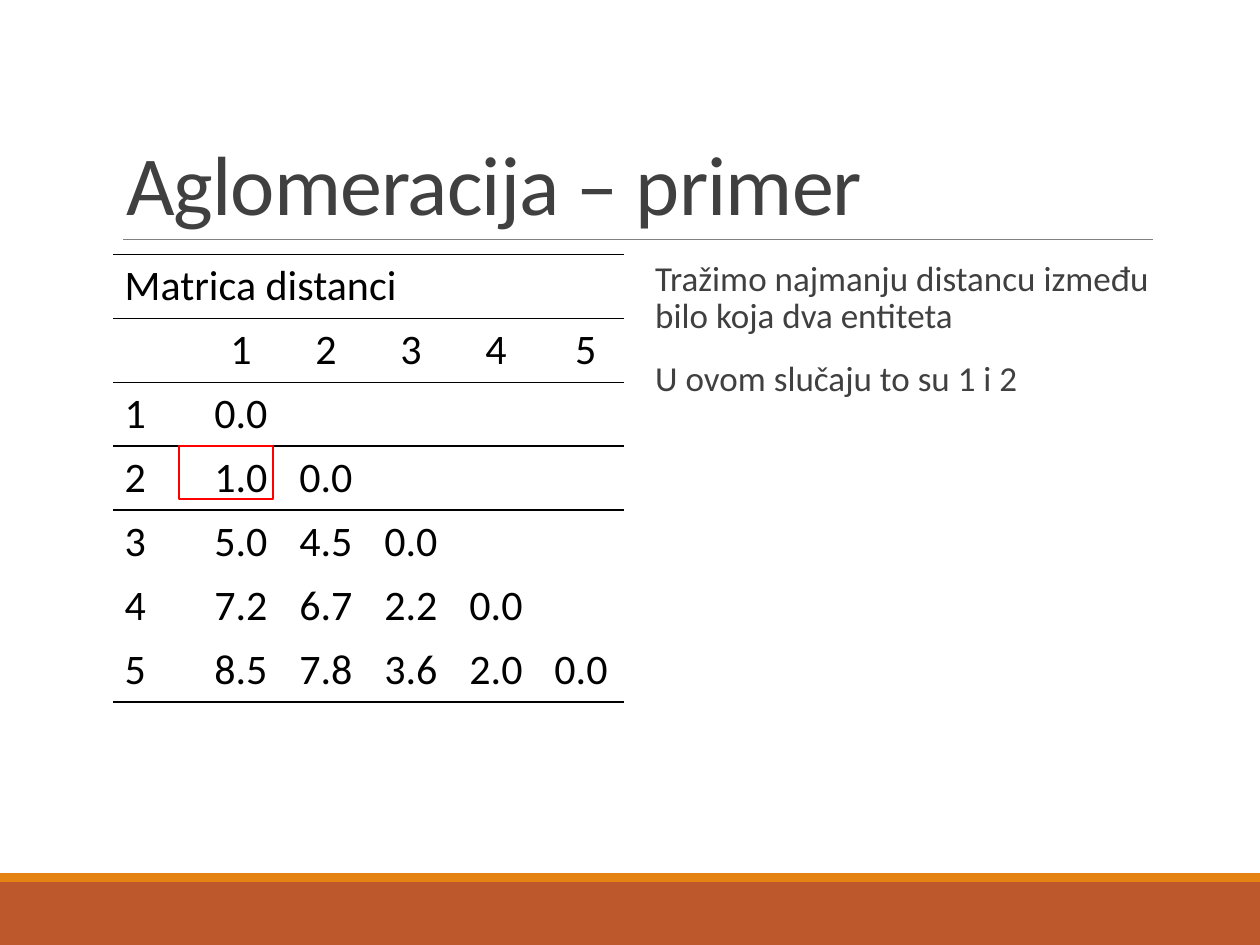
import pptx
import pptx.util
import pptx.oxml
import pptx.dml.color
import pptx.enum.shapes
import pptx.enum.text
from pptx.oxml.ns import qn

RGB = pptx.dml.color.RGBColor
RUST = RGB(0xBD, 0x58, 0x2C)
ORANGE = RGB(0xE4, 0x83, 0x12)
GREY = RGB(0x80, 0x80, 0x80)
DARK = RGB(0x40, 0x40, 0x40)
BLACK = RGB(0, 0, 0)
RED = RGB(0xFF, 0, 0)
NS = 'xmlns:a="http://schemas.openxmlformats.org/drawingml/2006/main"'
NO_STYLE = "{2D5ABB26-0587-4C30-8999-92F81FD0307C}"
PP, MSO = pptx.enum.text.PP_ALIGN, pptx.enum.text.MSO_ANCHOR
RECT = pptx.enum.shapes.MSO_SHAPE.RECTANGLE
Inches, Pt = pptx.util.Inches, pptx.util.Pt

prs = pptx.Presentation()
prs.slide_width, prs.slide_height = Inches(10), Inches(7.5)
s = prs.slides.add_slide(prs.slide_layouts[1])

# Page grid: outer margins, two equal columns with a gutter
LEFT, RIGHT, TOP = 0.9, 9.15, 2.02
GAP = 0.15
COL = (RIGHT - LEFT - GAP) / 2


def place(sp, x, y, w, h):
    box = {"left": x, "top": y, "width": w, "height": h}
    for name, value in box.items():
        setattr(sp, name, Inches(value))


def write(p, text, size, color, **paragraph):
    for name, value in paragraph.items():
        setattr(p, name, value)
    r = p.add_run()
    r.text = text
    for name, value in {"name": "Calibri", "size": Pt(size)}.items():
        setattr(r.font, name, value)
    r.font.color.rgb = color
    return r


# Footer bands
for y, h, color in ((7, 0.5, RUST), (6.93, 0.07, ORANGE)):
    sp = s.shapes.add_shape(RECT, 0, Inches(y), prs.slide_width, Inches(h))
    sp.shadow.inherit = False
    sp.fill.solid()
    sp.fill.fore_color.rgb = color
    sp.line.fill.background()

# Rule below the title
rule = s.shapes.add_connector(pptx.enum.shapes.MSO_CONNECTOR.STRAIGHT,
                              Inches(0.98), Inches(1.9), Inches(RIGHT), Inches(1.9))
rule.line.color.rgb = GREY
rule.line.width = Pt(0.5)
rule._element.spPr.append(pptx.oxml.parse_xml(f"<a:effectLst {NS}/>"))

# Title
title = s.shapes.title
place(title, LEFT, 0.31, RIGHT - LEFT, 1.59)
tf = title.text_frame
tf.auto_size = pptx.enum.text.MSO_AUTO_SIZE.NONE
tf.vertical_anchor = MSO.BOTTOM
r = write(tf.paragraphs[0], "Aglomeracija – primer", 48, DARK,
          alignment=PP.LEFT, line_spacing=0.85)
r.font._element.set("spc", "-50")

# Distance matrix
ROWS = [
    ["Matrica distanci"],
    ["", "1", "2", "3", "4", " 5"],
    ["1", "0.0"],
    ["2", "1.0", "0.0"],
    ["3", "5.0", "4.5", "0.0"],
    ["4", "7.2", "6.7", "2.2", "0.0"],
    ["5", "8.5", "7.8", "3.6", "2.0", "0.0"],
]
N = 6
RULED_BELOW = {0, 1, 2, 6}
ROW_H = 0.507
table = s.shapes.add_table(len(ROWS), N, Inches(LEFT), Inches(TOP),
                           Inches(COL), Inches(ROW_H * len(ROWS))).table
table.first_row = table.horz_banding = False
table._tbl.tblPr.find(qn("a:tableStyleId")).text = NO_STYLE
table.cell(0, 0).merge(table.cell(0, N - 1))
for i, row in enumerate(ROWS):
    for j in range(N):
        cell = table.cell(i, j)
        margins = {"margin_left": 0.09, "margin_right": 0.09,
                   "margin_top": 0.05, "margin_bottom": 0.05}
        for name, value in margins.items():
            setattr(cell, name, Inches(value))
        cell.vertical_anchor = MSO.MIDDLE if i else MSO.TOP
        if j < len(row) and row[j]:
            write(cell.text_frame.paragraphs[0], row[j], 24, BLACK,
                  alignment=PP.CENTER if j else PP.LEFT)
        # Horizontal rules only
        for side, ruled in (("T", i == 0 or i - 1 in RULED_BELOW),
                            ("B", i in RULED_BELOW)):
            if ruled:
                cell._tc.get_or_add_tcPr().append(pptx.oxml.parse_xml(
                    f'<a:ln{side} {NS} w="12700"><a:solidFill>'
                    f'<a:srgbClr val="{BLACK}"/></a:solidFill></a:ln{side}>'))
        cell.fill.background()

# Explanation
body = s.placeholders[1]
place(body, LEFT + COL + GAP, TOP, COL, 4.4)
tf = body.text_frame
tf.auto_size = pptx.enum.text.MSO_AUTO_SIZE.NONE
tf.margin_left = tf.margin_right = 0
for i, text in enumerate(("Tražimo najmanju distancu između bilo koja dva entiteta",
                          "U ovom slučaju to su 1 i 2")):
    p = tf.add_paragraph() if i else tf.paragraphs[0]
    write(p, text, 20, DARK, alignment=PP.LEFT, line_spacing=0.9,
          space_before=Pt(12), space_after=Pt(2))
    pPr = p._p.get_or_add_pPr()
    for name, value in {"marL": 0.1, "indent": -0.1}.items():
        pPr.set(name, str(Inches(value)))
    for xml in (f'<a:buClr {NS}><a:srgbClr val="{ORANGE}"/></a:buClr>',
                f'<a:buChar {NS} char=" "/>'):
        pPr.append(pptx.oxml.parse_xml(xml))

# Frame around the smallest distance
frame = s.shapes.add_shape(RECT, Inches(1.42), Inches(3.54), Inches(0.75), Inches(0.42))
frame.shadow.inherit = False
frame.fill.background()
frame.line.color.rgb = RED
frame.line.width = Pt(1.25)

prs.save("out.pptx")
